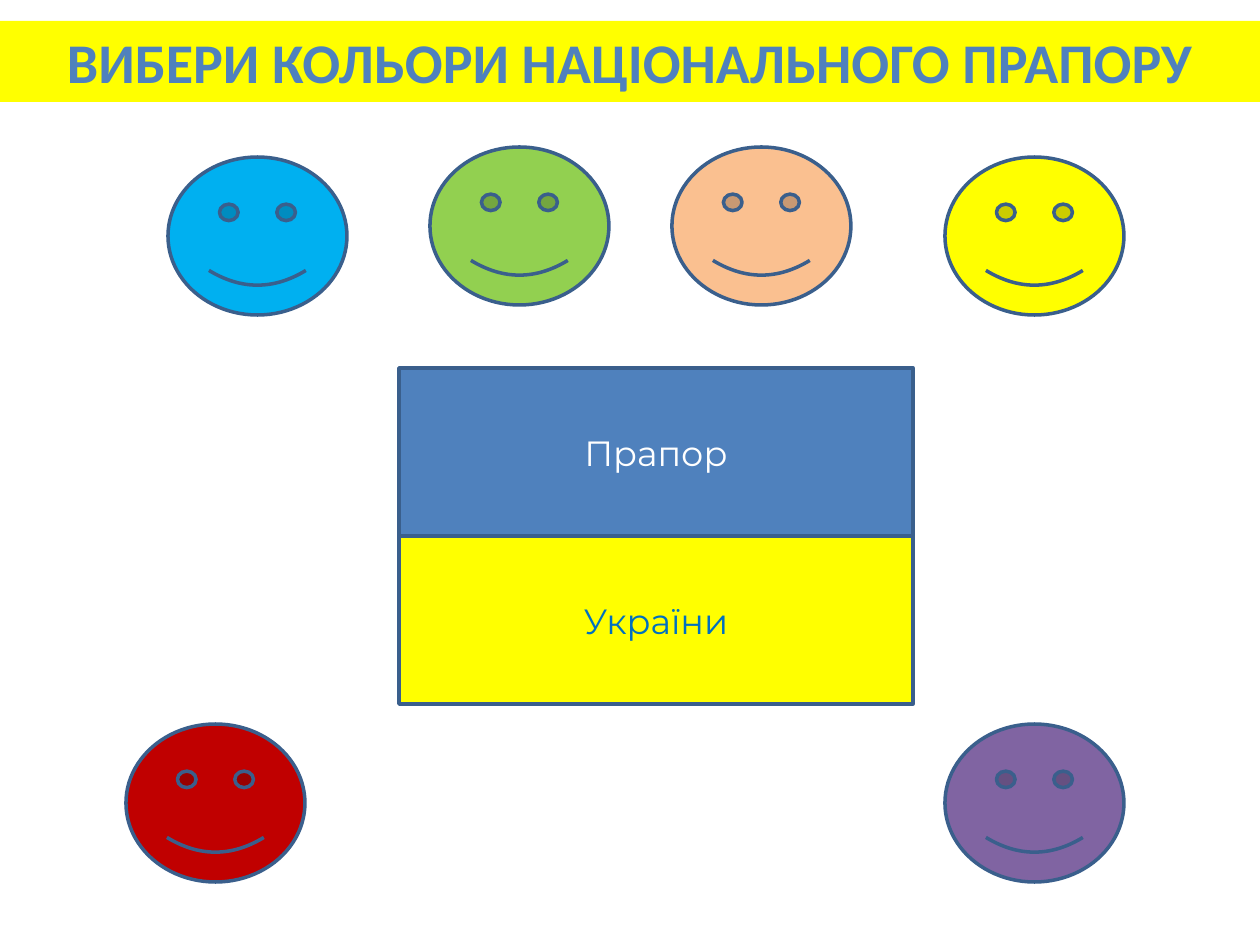
from pptx import Presentation
from pptx.dml.color import RGBColor
from pptx.enum.shapes import MSO_SHAPE
from pptx.enum.text import MSO_ANCHOR, MSO_AUTO_SIZE, PP_ALIGN
from pptx.util import Pt

EMU_PER_PX = 914400 // 126

OUTLINE = RGBColor(0x3A, 0x5F, 0x8C)
WHITE = RGBColor(0xFF, 0xFF, 0xFF)
YELLOW = RGBColor(0xFF, 0xFF, 0x00)
BLUE = RGBColor(0x4F, 0x81, 0xBD)
DEEP_BLUE = RGBColor(0x00, 0x70, 0xC0)
SKY = RGBColor(0x00, 0xB0, 0xF0)
RED = RGBColor(0xC0, 0x00, 0x00)
GREEN = RGBColor(0x92, 0xD0, 0x50)
PEACH = RGBColor(0xFA, 0xC0, 0x90)
PURPLE = RGBColor(0x80, 0x64, 0xA2)

SLIDE_WIDTH, SLIDE_HEIGHT = 1260, 945
FACE_WIDTH, FACE_HEIGHT = 179, 158
FLAG_LEFT, FLAG_TOP = 399, 368
BAND_WIDTH, BAND_HEIGHT = 514, 168

# Left, top and colour of each face
FACES = [
    (168, 157, SKY),
    (126, 724, RED),
    (430, 147, GREEN),
    (672, 147, PEACH),
    (945, 724, PURPLE),
    (945, 157, YELLOW),
]

# Wording, fill and text colour of each flag band, top to bottom
FLAG_BANDS = [
    ("Прапор", BLUE, WHITE),
    ("України", YELLOW, DEEP_BLUE),
]


def px(length):
    return length * EMU_PER_PX


def add_outlined_shape(slide, kind, left, top, width, height, fill):
    shape = slide.shapes.add_shape(kind, px(left), px(top), px(width), px(height))
    shape.shadow.inherit = False
    shape.fill.solid()
    shape.fill.fore_color.rgb = fill
    shape.line.color.rgb = OUTLINE
    shape.line.width = Pt(2)
    return shape


def write_centred(text_frame, text, font_name, size, color, bold=False):
    text_frame.word_wrap = True
    paragraph = text_frame.paragraphs[0]
    paragraph.alignment = PP_ALIGN.CENTER
    run = paragraph.add_run()
    run.text = text
    run.font.name = font_name
    run.font.size = Pt(size)
    run.font.bold = bold
    run.font.color.rgb = color


def add_face(slide, left, top, fill):
    add_outlined_shape(slide, MSO_SHAPE.SMILEY_FACE, left, top,
                       FACE_WIDTH, FACE_HEIGHT, fill)


def add_flag_band(slide, row, text, fill, text_color):
    band = add_outlined_shape(slide, MSO_SHAPE.RECTANGLE, FLAG_LEFT,
                              FLAG_TOP + row * BAND_HEIGHT,
                              BAND_WIDTH, BAND_HEIGHT, fill)
    band.text_frame.vertical_anchor = MSO_ANCHOR.MIDDLE
    write_centred(band.text_frame, text, "Montserrat", 20, text_color)


def add_title(slide, text):
    title = slide.shapes.add_textbox(0, px(21), px(SLIDE_WIDTH), px(81))
    title.fill.solid()
    title.fill.fore_color.rgb = YELLOW
    title.text_frame.auto_size = MSO_AUTO_SIZE.SHAPE_TO_FIT_TEXT
    write_centred(title.text_frame, text, "Calibri", 32, BLUE, bold=True)


def main():
    presentation = Presentation()
    presentation.slide_width = px(SLIDE_WIDTH)
    presentation.slide_height = px(SLIDE_HEIGHT)
    slide = presentation.slides.add_slide(presentation.slide_layouts[6])

    # Colour choices
    for left, top, fill in FACES:
        add_face(slide, left, top, fill)

    # Flag
    for row, (text, fill, text_color) in enumerate(FLAG_BANDS):
        add_flag_band(slide, row, text, fill, text_color)

    # Heading
    add_title(slide, "ВИБЕРИ КОЛЬОРИ НАЦІОНАЛЬНОГО ПРАПОРУ")

    presentation.save("out.pptx")


if __name__ == "__main__":
    main()
